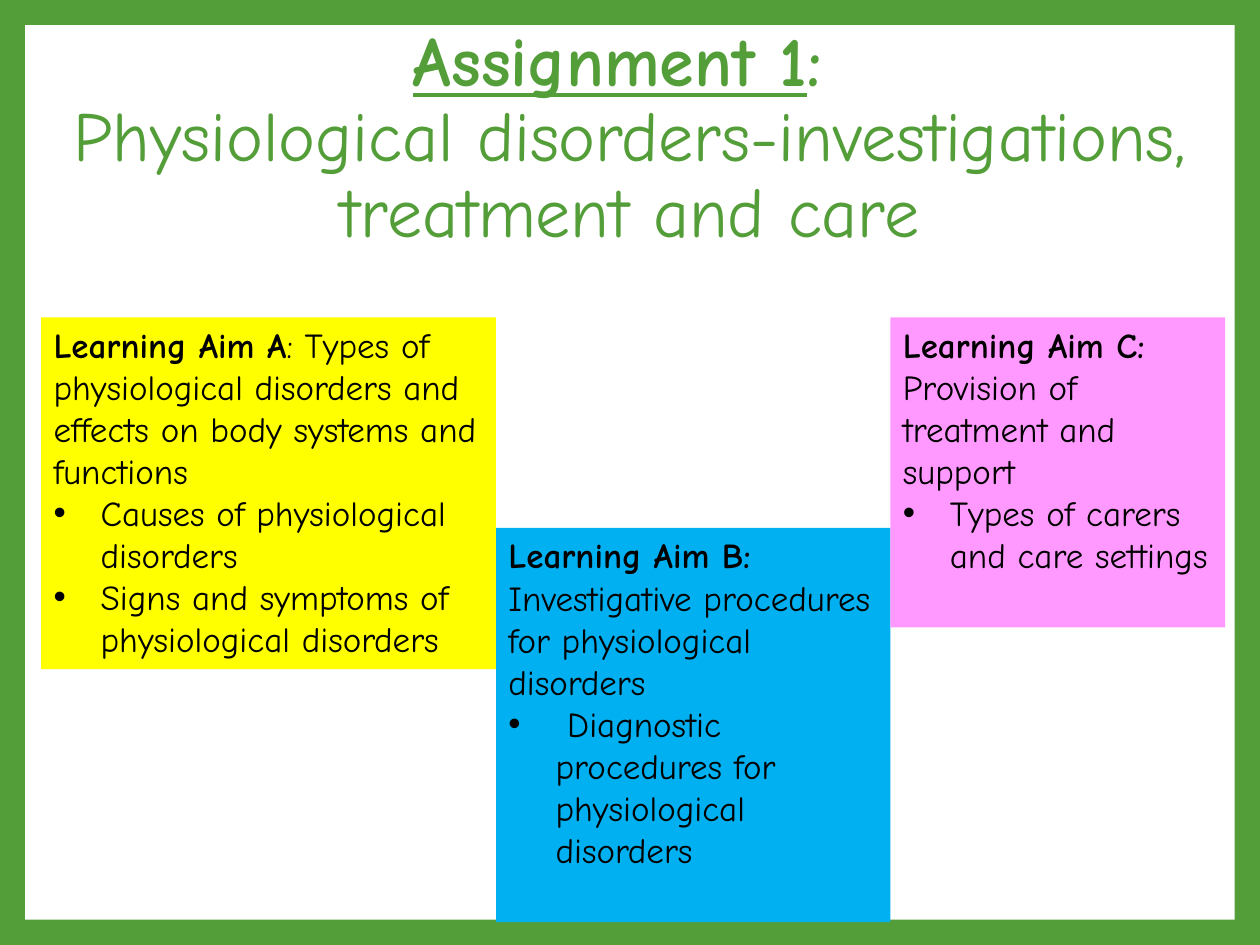
"""Build the Assignment 1 slide with its three learning aims."""
from dataclasses import dataclass

import pptx
import pptx.dml.color
import pptx.enum.shapes
import pptx.enum.text
import pptx.oxml
import pptx.oxml.ns
import pptx.util
from pptx.util import Cm


@dataclass(frozen=True)
class Theme:
    font: str = "Comic Neue"
    green: str = "549E39"
    white: str = "FFFFFF"
    black: str = "000000"
    yellow: str = "FFFF00"
    blue: str = "00B0F0"
    pink: str = "FF99FF"
    title_size: int = 40
    body_size: int = 20


theme = Theme()


def add_panel(page, left, top, width, height, colour):
    panel = page.shapes.add_shape(
        pptx.enum.shapes.MSO_SHAPE.RECTANGLE, Cm(left), Cm(top), Cm(width), Cm(height)
    )
    panel.shadow.inherit = False
    panel.fill.solid()
    panel.fill.fore_color.rgb = pptx.dml.color.RGBColor.from_string(colour)
    panel.line.fill.background()
    return panel


def add_span(para, text, size, colour, bold=False, underline=False):
    span = para.add_run()
    span.text = text
    span.font.name = theme.font
    span.font.size = pptx.util.Pt(size)
    span.font.bold = bold
    span.font.underline = underline
    span.font.color.rgb = pptx.dml.color.RGBColor.from_string(colour)


deck = pptx.Presentation()
deck.slide_width, deck.slide_height = Cm(25.4), Cm(19.05)
page = deck.slides.add_slide(deck.slide_layouts[6])
page.background.fill.solid()
page.background.fill.fore_color.rgb = pptx.dml.color.RGBColor.from_string(theme.green)
add_panel(page, 0.51, 0.51, 24.38, 18.03, theme.white)

title = page.shapes.add_textbox(Cm(0), Cm(1.75), Cm(25.4), Cm(2.11))
title.text_frame.word_wrap = True
title.text_frame.vertical_anchor = pptx.enum.text.MSO_ANCHOR.MIDDLE
heading = title.text_frame.paragraphs[0]
heading.alignment = pptx.enum.text.PP_ALIGN.CENTER
heading.line_spacing = 0.9
add_span(heading, "Assignment 1", theme.title_size, theme.green, bold=True, underline=True)
add_span(heading, ": ", theme.title_size, theme.green, bold=True)
heading.add_line_break()
add_span(
    heading,
    "Physiological disorders-investigations, treatment and care",
    theme.title_size,
    theme.green,
)

aims = [
    (
        (0.83, 6.4, 9.17, 7.09), theme.yellow, "Learning Aim A",
        ": Types of physiological disorders and effects on body systems and functions",
        ["Causes of physiological disorders", "Signs and symptoms of physiological disorders"],
    ),
    (
        (10, 10.64, 7.95, 7.95), theme.blue, "Learning Aim B: ",
        "Investigative procedures for physiological disorders",
        [" Diagnostic procedures for physiological disorders"],
    ),
    (
        (17.95, 6.4, 6.75, 6.25), theme.pink, "Learning Aim C: ",
        "Provision of treatment and support",
        ["Types of carers and care settings"],
    ),
]

for bounds, colour, label, summary, points in aims:
    frame = add_panel(page, *bounds, colour).text_frame
    frame.word_wrap = True
    frame.vertical_anchor = pptx.enum.text.MSO_ANCHOR.TOP
    para = frame.paragraphs[0]
    para.alignment = pptx.enum.text.PP_ALIGN.LEFT
    add_span(para, label, theme.body_size, theme.black, bold=True)
    add_span(para, summary, theme.body_size, theme.black)
    for point in points:
        para = frame.add_paragraph()
        para.alignment = pptx.enum.text.PP_ALIGN.LEFT
        properties = para._p.get_or_add_pPr()
        properties.set("marL", str(Cm(0.95)))
        properties.set("indent", str(Cm(-0.95)))
        for tag, name, value in (("buFont", "typeface", "Arial"), ("buChar", "char", "•")):
            bullet = pptx.oxml.parse_xml(f'<a:{tag} {pptx.oxml.ns.nsdecls("a")}/>')
            bullet.set(name, value)
            properties.append(bullet)
        add_span(para, point, theme.body_size, theme.black)

deck.save("out.pptx")
